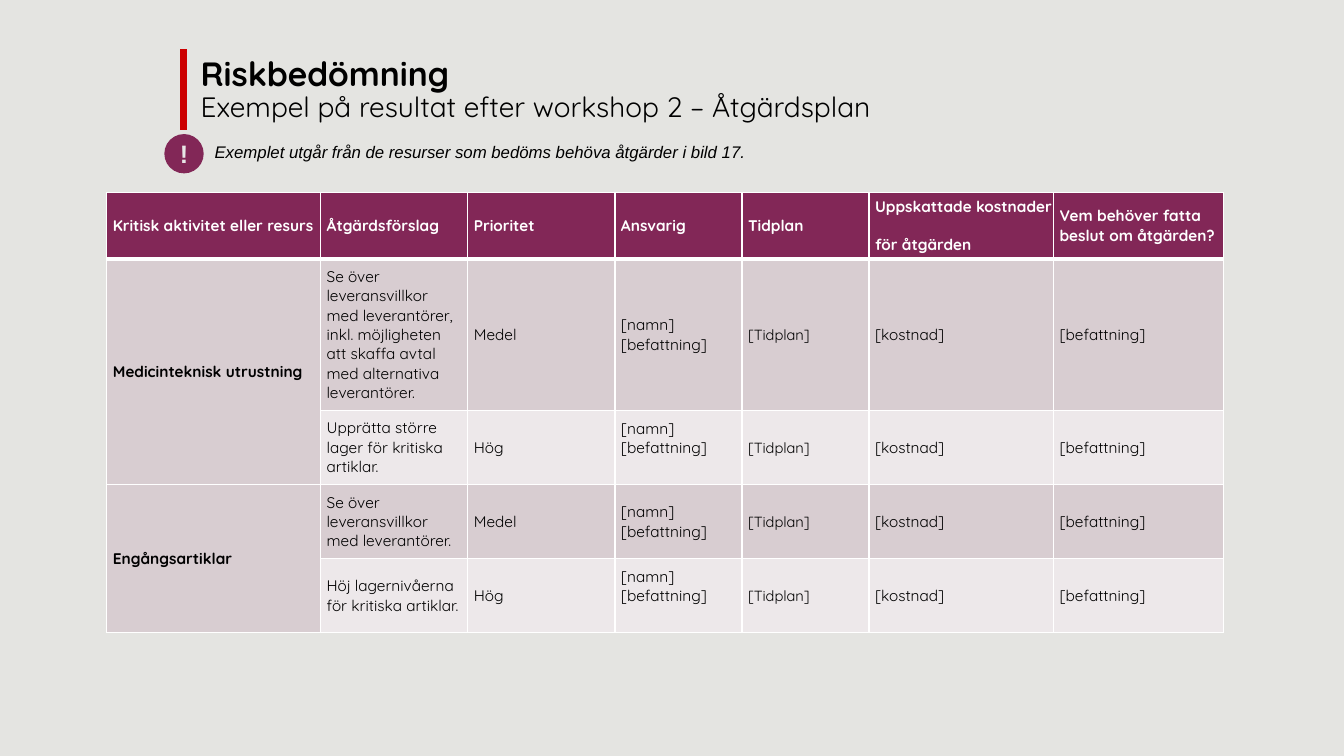
from dataclasses import dataclass

from lxml.etree import SubElement
from pptx import Presentation
from pptx.dml.color import RGBColor
from pptx.enum.shapes import MSO_CONNECTOR, MSO_SHAPE
from pptx.enum.text import MSO_ANCHOR, MSO_AUTO_SIZE, PP_ALIGN
from pptx.oxml import parse_xml
from pptx.oxml.ns import nsdecls, qn
from pptx.util import Pt

PX = 9144  # 100 px to the inch


@dataclass(frozen=True)
class Theme:
    background: str = "E4E4E1"
    plum: str = "822757"
    red: str = "CC0000"
    band_dark: str = "D8CDD1"
    band_light: str = "EDE8EA"
    white: str = "FFFFFF"
    black: str = "000000"
    mark: str = "E7E6E6"
    heading_font: str = "Quicksand"
    note_font: str = "Arial"
    title_size: float = 24
    subtitle_size: float = 20
    mark_size: float = 18
    note_size: float = 12
    table_size: float = 11
    schedule_size: float = 10.5


@dataclass(frozen=True)
class Style:
    font: str
    size: float
    color: str
    bold: bool = False
    italic: bool = False


@dataclass(frozen=True)
class Margins:
    left: int
    top: int
    right: int
    bottom: int


@dataclass(frozen=True)
class Measure:
    action: str
    priority: str
    fill: str
    owner_bottom: int = 8


@dataclass(frozen=True)
class Resource:
    name: str
    measures: tuple[Measure, ...]


T = Theme()
HEADER = Style(T.heading_font, T.table_size, T.white, bold=True)
NAME = Style(T.heading_font, T.table_size, T.black, bold=True)
BODY = Style(T.heading_font, T.table_size, T.black)
SCHEDULE = Style(T.heading_font, T.schedule_size, T.black)

COLUMNS = {
    "Kritisk aktivitet eller resurs": 212,
    "Åtgärdsförslag": 146,
    "Prioritet": 146,
    "Ansvarig": 126,
    "Tidplan": 126,
    "Uppskattade kostnader \vför åtgärden": 183,
    "Vem behöver fatta \vbeslut om åtgärden?": 169,
}
ROW_HEIGHTS = (66, 149, 73, 73, 73)
RESOURCES = (
    Resource("Medicinteknisk utrustning", (
        Measure("Se över leveransvillkor med leverantörer, inkl. möjligheten "
                "att skaffa avtal med alternativa leverantörer.", "Medel", T.band_dark),
        Measure("Upprätta större lager för kritiska artiklar.", "Hög", T.band_light, 27),
    )),
    Resource("Engångsartiklar", (
        Measure("Se över leveransvillkor med leverantörer.", "Medel", T.band_dark),
        Measure("Höj lagernivåerna för kritiska artiklar.", "Hög", T.band_light, 27),
    )),
)


def rgb(color: str) -> RGBColor:
    return RGBColor.from_string(color)


def box(*lengths: int) -> list[int]:
    return [n * PX for n in lengths]


def apply_style(font, style: Style) -> None:
    font.name = style.font
    font.size = Pt(style.size)
    font.bold = style.bold
    font.italic = style.italic
    font.color.rgb = rgb(style.color)


def set_margins(target, margins: Margins) -> None:
    target.margin_left, target.margin_top, target.margin_right, target.margin_bottom = box(
        margins.left, margins.top, margins.right, margins.bottom)


def set_borders(cell, top: int = 1, bottom: int = 1) -> None:
    """White cell borders, with widths in points."""
    tc_pr = cell._tc.get_or_add_tcPr()
    widths = {"lnL": 1, "lnR": 1, "lnT": top, "lnB": bottom}
    for i, (tag, width) in enumerate(widths.items()):
        tc_pr.insert(i, parse_xml(
            f'<a:{tag} {nsdecls("a")} w="{Pt(width)}"><a:solidFill>'
            f'<a:srgbClr val="{T.white}"/></a:solidFill></a:{tag}>'))


def fill_cell(cell, text: str, style: Style, fill: str, margins: Margins) -> None:
    cell.text_frame.text = text
    for p in cell.text_frame.paragraphs:
        apply_style(p.font, style)
    cell.vertical_anchor = MSO_ANCHOR.MIDDLE
    set_margins(cell, margins)
    cell.fill.solid()
    cell.fill.fore_color.rgb = rgb(fill)


def add_plan(s) -> None:
    frame = s.shapes.add_table(len(ROW_HEIGHTS), len(COLUMNS), *box(
        106, 191, sum(COLUMNS.values()), sum(ROW_HEIGHTS)))
    table = frame.table
    table.horz_banding = False
    for row, height in zip(table.rows, ROW_HEIGHTS):
        row.height = height * PX
    for i, (heading, width) in enumerate(COLUMNS.items()):
        table.columns[i].width = width * PX
        fill_cell(table.cell(0, i), heading, HEADER, T.plum, Margins(6, 4, 0, 4))

    normal = Margins(6, 8, 6, 8)
    row = 1
    for resource in RESOURCES:
        first = table.cell(row, 0)
        first.merge(table.cell(row + len(resource.measures) - 1, 0))
        fill_cell(first, resource.name, NAME, T.band_dark, normal)
        for m in resource.measures:
            owner = Margins(6, 8, 6, m.owner_bottom)
            values = (
                (m.action, BODY, normal),
                (m.priority, BODY, normal),
                ("[namn]\n[befattning]", BODY, owner),
                ("[Tidplan]", SCHEDULE, normal),
                ("[kostnad]", BODY, normal),
                ("[befattning]", BODY, normal),
            )
            for col, (text, style, margins) in enumerate(values, start=1):
                fill_cell(table.cell(row, col), text, style, m.fill, margins)
            row += 1

    for r in range(len(ROW_HEIGHTS)):
        for c in range(len(COLUMNS)):
            set_borders(table.cell(r, c), top=3 if r == 1 else 1, bottom=3 if r == 0 else 1)


def add_title(s) -> None:
    title = s.shapes.title
    title.left, title.top, title.width, title.height = box(189, 52, 983, 80)
    tf = title.text_frame
    tf.auto_size = MSO_AUTO_SIZE.NONE
    tf.vertical_anchor = MSO_ANCHOR.TOP
    p = tf.paragraphs[0]
    p.alignment = PP_ALIGN.LEFT
    p.line_spacing = 0.9
    r = p.add_run()
    r.text = "Riskbedömning"
    apply_style(r.font, Style(T.heading_font, T.title_size, T.black, bold=True))
    p.add_line_break()
    r = p.add_run()
    r.text = "Exempel på resultat efter workshop 2 – Åtgärdsplan"
    apply_style(r.font, Style(T.heading_font, T.subtitle_size, T.black))


def add_title_bar(s) -> None:
    bar = s.shapes.add_connector(MSO_CONNECTOR.STRAIGHT, *box(182, 49, 182, 129))
    bar.line.color.rgb = rgb(T.red)
    bar.line.width = Pt(5)
    SubElement(bar._element.spPr, qn("a:effectLst"))


def add_note(s) -> None:
    tf = s.shapes.add_textbox(*box(203, 136, 717, 30)).text_frame
    tf.word_wrap = True
    p = tf.paragraphs[0]
    p.text = "Exemplet utgår från de resurser som bedöms behöva åtgärder i bild 17."
    apply_style(p.font, Style(T.note_font, T.note_size, T.black, italic=True))

    mark = s.shapes.add_shape(MSO_SHAPE.OVAL, *box(163, 133, 39, 39))
    mark.shadow.inherit = False
    mark.fill.solid()
    mark.fill.fore_color.rgb = rgb(T.plum)
    mark.line.fill.background()
    tf = mark.text_frame
    set_margins(tf, Margins(0, 0, 0, 0))
    tf.vertical_anchor = MSO_ANCHOR.MIDDLE
    p = tf.paragraphs[0]
    p.text = "!"
    p.alignment = PP_ALIGN.CENTER
    apply_style(p.font, Style(T.note_font, T.mark_size, T.mark, bold=True))


def main() -> None:
    prs = Presentation()
    prs.slide_width, prs.slide_height = box(1333, 750)
    s = prs.slides.add_slide(prs.slide_layouts[5])
    s.background.fill.solid()
    s.background.fill.fore_color.rgb = rgb(T.background)
    add_plan(s)
    add_title(s)
    add_title_bar(s)
    add_note(s)
    prs.save("out.pptx")


if __name__ == "__main__":
    main()
